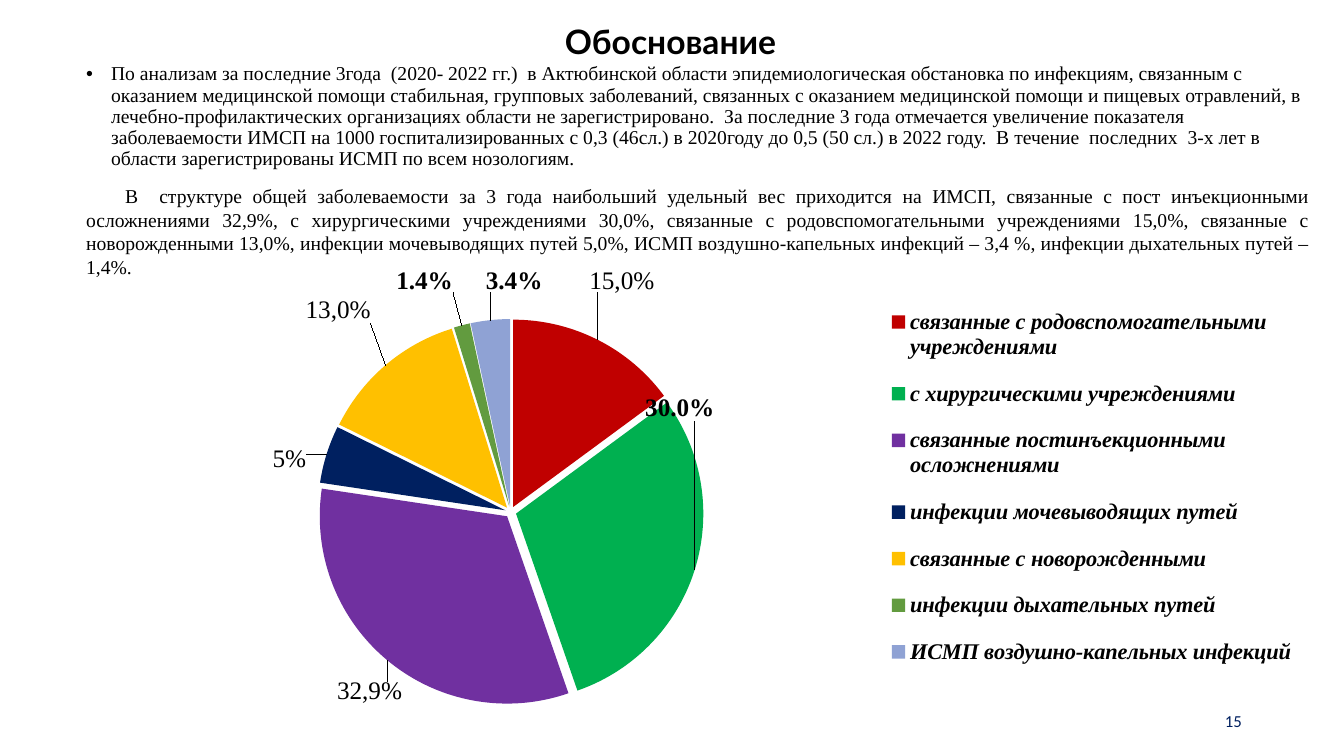
import pptx
import pptx.chart.data
import pptx.dml.color
import pptx.enum.chart
import pptx.enum.text
import pptx.oxml
import pptx.oxml.ns
import pptx.util

TITLE = "Обоснование"
SITUATION = (
    "По анализам за последние 3года  (2020- 2022 гг.)  в Актюбинской области "
    "эпидемиологическая обстановка по инфекциям, связанным с оказанием медицинской помощи "
    "стабильная, групповых заболеваний, связанных с оказанием медицинской помощи и пищевых "
    "отравлений, в лечебно-профилактических организациях области не зарегистрировано.  "
    "За последние 3 года отмечается увеличение показателя заболеваемости ИМСП на 1000 "
    "госпитализированных с 0,3 (46сл.) в 2020году до 0,5 (50 сл.) в 2022 году.  В течение  "
    "последних  3-х лет в области зарегистрированы ИСМП по всем нозологиям."
)
STRUCTURE = (
    "В  структуре общей заболеваемости за 3 года наибольший удельный вес приходится на ИМСП, "
    "связанные с пост инъекционными осложнениями 32,9%, с хирургическими учреждениями 30,0%, "
    "связанные с родовспомогательными учреждениями 15,0%, связанные с новорожденными 13,0%, "
    "инфекции мочевыводящих путей 5,0%, ИСМП воздушно-капельных инфекций – 3,4 %, "
    "инфекции дыхательных путей – 1,4%."
)
PAGE_NUMBER = "15"

# category, share, colour, typed label (None shows the value), label shift in px
SLICES = [
    ("связанные с родовспомогательными учреждениями", 0.15, "C00000", "15,0%", (-11, -42)),
    ("с хирургическими учреждениями", 0.3, "00B050", None, (-55, -177)),
    ("связанные постинъекционными осложнениями", 0.329, "7030A0", "32,9%", (19, 16)),
    ("инфекции мочевыводящих путей", 0.05, "002060", "5%", (-15, 20)),
    ("связанные с новорожденными", 0.13, "FFC000", "13,0%", (-11, -37)),
    ("инфекции дыхательных путей", 0.014, "629B3F", None, (-8, -27)),
    ("ИСМП воздушно-капельных инфекций", 0.034, "8FA2D4", None, (53, -22)),
]

THEME = {
    "black": "000000", "navy": "002060",
    "title_font": "Lato", "text_font": "Times New Roman", "number_font": "Calibri",
    "title": 24, "body": 14, "number": 12, "label": 18, "legend": 16,
}

PX = pptx.util.Inches(1) / 100.8
PAGE = (1344, 756)
TITLE_BOX = (237, 20, 867, 48)
BODY_BOX = (76, 59, 1244, 130)
NUMBER_BOX = (950, 701, 302, 40)
CHART_BOX = (82, 267, 1232, 438)
PIE_BOX = (147, 319, 727, 386)
LEGEND_BOX = (882, 288, 420, 398)
EXPLOSION = 3
PERCENT = "0.0%"


def px(length):
    return pptx.util.Emu(round(length * PX))


def place(shape, box):
    shape.left, shape.top, shape.width, shape.height = map(px, box)


def rgb(colour):
    return pptx.dml.color.RGBColor.from_string(colour)


def style(font, *, size, name, colour=THEME["black"], bold=False, italic=False):
    font.size, font.name = pptx.util.Pt(size), name
    font.bold, font.italic = bold, italic
    font.color.rgb = rgb(colour)


def write(para, text, *, align=None, spacing=1.0, before=0, **font):
    span = para.add_run()
    span.text = text
    style(span.font, **font)
    para.alignment, para.line_spacing = align, spacing
    para.space_before = pptx.util.Pt(before)


def indent(para, margin, first):
    props = para._p.get_or_add_pPr()
    props.set("marL", str(px(margin)))
    props.set("indent", str(px(first)))
    return props


def element(tag, **children):
    """Make a chart element whose children carry only a val attribute."""
    inner = "".join(f'<c:{key} val="{value}"/>' for key, value in children.items())
    return pptx.oxml.parse_xml(f'<c:{tag} {pptx.oxml.ns.nsdecls("c")}>{inner}</c:{tag}>')


def layout(**settings):
    holder = element("layout")
    holder.append(element("manualLayout", **settings))
    return holder


def box_layout(box, **settings):
    """Layout of a px box on the page as fractions of the chart."""
    left, top, width, height = CHART_BOX
    return layout(
        **settings, xMode="edge", yMode="edge",
        x=round((box[0] - left) / width, 3), y=round((box[1] - top) / height, 3),
        w=round(box[2] / width, 3), h=round(box[3] / height, 3))


def replace_layout(parent, new, index):
    for old in parent.xpath("./c:layout"):
        parent.remove(old)
    parent.insert(index, new)


def add_label(series, index, text, shift):
    label = series.points[index].data_label
    font = dict(size=THEME["label"], name=THEME["text_font"])
    label.position = pptx.enum.chart.XL_LABEL_POSITION.OUTSIDE_END
    if text:
        write(label.text_frame.paragraphs[0], text, **font)
    else:
        style(label.font, bold=True, **font)
    node = series._element.xpath(f'.//c:dLbl[c:idx/@val="{index}"]')[0]
    replace_layout(node, layout(x=round(shift[0] / CHART_BOX[2], 3),
                                y=round(shift[1] / CHART_BOX[3], 3)), 1)
    if not text:
        number = element("numFmt")
        number.set("formatCode", PERCENT)
        number.set("sourceLinked", "0")
        node.insert(2, number)


def add_pie(page):
    data = pptx.chart.data.CategoryChartData(number_format=PERCENT)
    data.categories = [item[0] for item in SLICES]
    data.add_series("Series 1", [item[1] for item in SLICES])
    chart = page.shapes.add_chart(
        pptx.enum.chart.XL_CHART_TYPE.PIE, *map(px, CHART_BOX), data).chart
    chart.has_title = False
    style(chart.font, size=THEME["label"], name=THEME["number_font"])
    chart.has_legend = True
    chart.legend.position = pptx.enum.chart.XL_LEGEND_POSITION.RIGHT
    chart.legend.include_in_layout = False
    style(chart.legend.font, size=THEME["legend"], name=THEME["text_font"],
          bold=True, italic=True)
    replace_layout(chart.legend._element, box_layout(LEGEND_BOX), 1)
    area = chart._chartSpace.xpath(".//c:plotArea")[0]
    replace_layout(area, box_layout(PIE_BOX, layoutTarget="inner"), 0)

    plot = chart.plots[0]
    plot.vary_by_categories = True
    series = plot.series[0]
    for index, (_, _, colour, text, shift) in enumerate(SLICES):
        fill = series.points[index].format.fill
        fill.solid()
        fill.fore_color.rgb = rgb(colour)
        add_label(series, index, text, shift)
    labels = series.data_labels
    labels.show_value = True
    labels.number_format, labels.number_format_is_linked = PERCENT, False
    style(labels.font, size=THEME["label"], name=THEME["text_font"], bold=True)
    explosion = element("explosion")
    explosion.set("val", str(EXPLOSION))
    series._element.xpath("./c:dPt")[0].addprevious(explosion)


def main():
    deck = pptx.Presentation()
    deck.slide_width, deck.slide_height = map(px, PAGE)
    page = deck.slides.add_slide(deck.slide_layouts[1])
    align, anchor = pptx.enum.text.PP_ALIGN, pptx.enum.text.MSO_ANCHOR
    title, body = page.placeholders
    number = page.shapes.add_textbox(0, 0, 0, 0)
    for shape, box in ((title, TITLE_BOX), (body, BODY_BOX), (number, NUMBER_BOX)):
        place(shape, box)
        shape.text_frame.word_wrap = True
        shape.text_frame.auto_size = pptx.enum.text.MSO_AUTO_SIZE.NONE
    title.text_frame.vertical_anchor = number.text_frame.vertical_anchor = anchor.MIDDLE
    body.text_frame.vertical_anchor = anchor.TOP

    write(title.text_frame.paragraphs[0], TITLE, align=align.CENTER, spacing=0.9,
          size=THEME["title"], name=THEME["title_font"], bold=True)
    prose = dict(before=10, size=THEME["body"], name=THEME["text_font"])
    bullet = body.text_frame.paragraphs[0]
    write(bullet, SITUATION, align=align.LEFT, spacing=0.9, **prose)
    indent(bullet, 25, -25)
    plain = body.text_frame.add_paragraph()
    write(plain, STRUCTURE, align=align.JUSTIFY, **prose)
    indent(plain, 0, 39).append(
        pptx.oxml.parse_xml(f'<a:buNone {pptx.oxml.ns.nsdecls("a")}/>'))
    write(number.text_frame.paragraphs[0], PAGE_NUMBER, align=align.RIGHT,
          size=THEME["number"], name=THEME["number_font"], colour=THEME["navy"])
    add_pie(page)
    deck.save("out.pptx")


if __name__ == "__main__":
    main()
